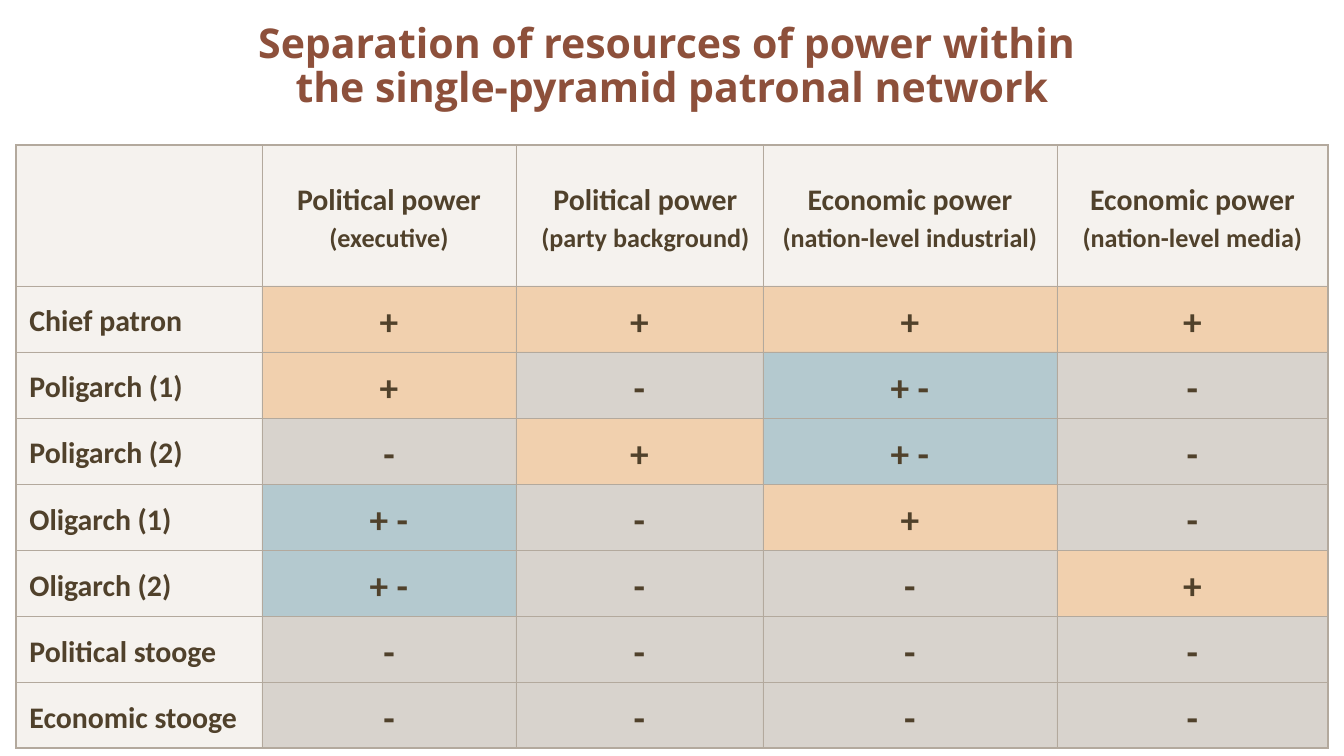
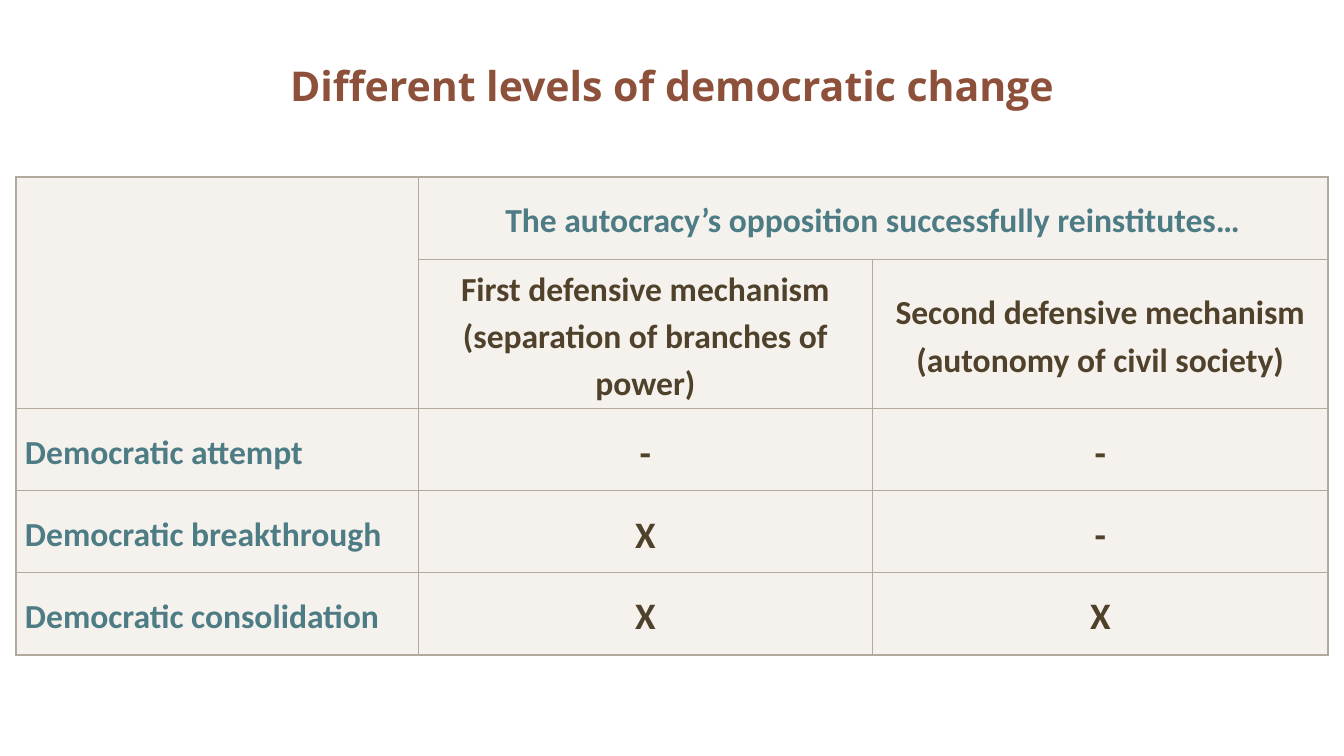
"""Build two slides of tables on power resources and democratic change."""
from lxml import etree
from pptx import Presentation
from pptx import util as u
from pptx.dml.color import RGBColor
from pptx.enum import text
from pptx.oxml import ns

SCALE = 914400 / 134.4
COLORS = {
    "title": "8D503B", "ink": "50412B", "teal": "4D7C85", "border": "B3A99D",
    "linen": "EFEAE4", "orange": "E9B178", "stone": "B3A99D", "blue": "6B95A1",
}
OPACITY = {"linen": 60, "orange": 60, "stone": 50, "blue": 50}
MARK_FILLS = {"+": "orange", "-": "stone", "+ -": "blue"}
MARGIN_SIDES = ("margin_left", "margin_top", "margin_right", "margin_bottom")
LEFT, WIDTH = 16, 1312

RESOURCES = [
    ("Political power ", "(executive)"),
    ("Political power ", "(party background)"),
    ("Economic power ", "(nation-level industrial)"),
    ("Economic power ", "(nation-level media)"),
]
ACTORS = [
    ("Chief patron", "+", "+", "+", "+"),
    ("Poligarch (1)", "+", "-", "+ -", "-"),
    ("Poligarch (2)", "-", "+", "+ -", "-"),
    ("Oligarch (1)", "+ -", "-", "+", "-"),
    ("Oligarch (2)", "+ -", "-", "-", "+"),
    ("Political stooge", "-", "-", "-", "-"),
    ("Economic stooge", "-", "-", "-", "-"),
]
MECHANISMS = [
    "First defensive mechanism (separation of branches of power)",
    "Second defensive mechanism (autonomy of civil society)",
]
LEVELS = [
    ("Democratic attempt", "-", "-"),
    ("Democratic breakthrough", "X", "-"),
    ("Democratic consolidation", "X", "X"),
]


def px(length):
    return u.Emu(round(length * SCALE))


def set_values(target, values):
    for name, value in values.items():
        setattr(target, name, value)


def style_font(font, name, size, color):
    set_values(font, {"name": name, "size": u.Pt(size), "bold": True})
    font.color.rgb = RGBColor.from_string(COLORS[color])


def add_title_slide(prs, heading, height):
    slide = prs.slides.add_slide(prs.slide_layouts[5])
    title = slide.shapes.title
    set_values(title, {"left": px(LEFT), "top": px(0),
                       "width": px(WIDTH), "height": px(height)})
    frame = title.text_frame
    frame.text = heading
    set_values(frame, {"word_wrap": True, "auto_size": text.MSO_AUTO_SIZE.NONE,
                       "vertical_anchor": text.MSO_ANCHOR.MIDDLE})
    line = frame.paragraphs[0]
    set_values(line, {"alignment": text.PP_ALIGN.CENTER, "line_spacing": 0.9})
    for run in line.runs:
        style_font(run.font, "Open Sans", 22, "title")
    return slide


def add_grid(slide, top, columns, rows):
    frame = slide.shapes.add_table(len(rows), len(columns), px(LEFT), px(top),
                                   px(sum(columns)), px(sum(rows)))
    grid = frame.table
    set_values(grid, {"first_row": False, "horz_banding": False})
    for column, width in zip(grid.columns, columns):
        column.width = px(width)
    for row, height in zip(grid.rows, rows):
        row.height = px(height)
    return grid


def fill_cell(cell, color):
    cell.fill.solid()
    cell.fill.fore_color.rgb = RGBColor.from_string(COLORS[color])
    srgb = cell._tc.tcPr.find(".//" + ns.qn("a:srgbClr"))
    etree.SubElement(srgb, ns.qn("a:alpha"), val=str(OPACITY[color] * 1000))


def write_cell(cell, parts, color="ink", centered=True, indent=0):
    """Write (wording, size) parts into the cell as one paragraph."""
    cell.vertical_anchor = text.MSO_ANCHOR.MIDDLE
    line = cell.text_frame.paragraphs[0]
    align = text.PP_ALIGN.CENTER if centered else text.PP_ALIGN.LEFT
    set_values(line, {"alignment": align, "line_spacing": 1.15})
    if indent:
        line._p.get_or_add_pPr().set("marL", str(px(indent)))
    for wording, size in parts:
        run = line.add_run()
        run.text = wording
        style_font(run.font, "Calibri", size, color)


def set_margins(cell, sides):
    set_values(cell, {name: px(side) for name, side in zip(MARGIN_SIDES, sides)})


def draw_borders(grid):
    """Give the outer edge a 1 pt line and the inner edges 0.5 pt."""
    last_row, last_column = len(grid.rows) - 1, len(grid.columns) - 1
    for r in range(last_row + 1):
        for c in range(last_column + 1):
            cell = grid.cell(r, c)
            right = c + (cell.span_width if cell.is_merge_origin else 1) - 1
            outer = {"L": c == 0, "R": right == last_column,
                     "T": r == 0, "B": r == last_row}
            properties = cell._tc.get_or_add_tcPr()
            for place, (side, edge) in enumerate(outer.items()):
                width = u.Pt(1 if edge else 0.5)
                border = etree.Element(ns.qn("a:ln" + side), w=str(width))
                solid = etree.SubElement(border, ns.qn("a:solidFill"))
                etree.SubElement(solid, ns.qn("a:srgbClr"), val=COLORS["border"])
                properties.insert(place, border)


def build_resources(prs):
    slide = add_title_slide(
        prs, "Separation of resources of power within \vthe single-pyramid patronal network", 134)
    grid = add_grid(slide, 145, [246, 254, 247, 294, 271], [141] + [65] * len(ACTORS))
    fill_cell(grid.cell(0, 0), "linen")
    for c, (power, scope) in enumerate(RESOURCES, 1):
        header = grid.cell(0, c)
        fill_cell(header, "linen")
        write_cell(header, [(power, 16), (scope, 14)], indent=12 if c == 2 else 0)
    for r, (actor, *marks) in enumerate(ACTORS, 1):
        label = grid.cell(r, 0)
        fill_cell(label, "linen")
        write_cell(label, [(actor, 16)], centered=False)
        for c, mark in enumerate(marks, 1):
            fill_cell(grid.cell(r, c), MARK_FILLS[mark])
            write_cell(grid.cell(r, c), [(mark, 20)])
    for r in range(len(ACTORS) + 1):
        set_margins(grid.cell(r, 2), (0, 0, 0, 0))
    draw_borders(grid)


def build_levels(prs):
    slide = add_title_slide(prs, "Different levels of democratic change", 177)
    grid = add_grid(slide, 177, [402, 455, 455], [82, 150] + [82] * len(LEVELS))
    for cell in grid.iter_cells():
        fill_cell(cell, "linen")
        set_margins(cell, (9, 0, 9, 0))
    grid.cell(0, 0).merge(grid.cell(1, 0))
    grid.cell(0, 1).merge(grid.cell(0, 2))
    write_cell(grid.cell(0, 1),
               [("The autocracy’s opposition successfully reinstitutes…", 18)], "teal")
    for c, mechanism in enumerate(MECHANISMS, 1):
        write_cell(grid.cell(1, c), [(mechanism, 18)])
    for r, (level, *marks) in enumerate(LEVELS, 2):
        write_cell(grid.cell(r, 0), [(level, 18)], "teal", centered=False)
        for c, mark in enumerate(marks, 1):
            write_cell(grid.cell(r, c), [(mark, 20)])
    draw_borders(grid)


def main():
    prs = Presentation()
    set_values(prs, {"slide_width": px(1344), "slide_height": px(756)})
    build_resources(prs)
    build_levels(prs)
    prs.save("out.pptx")


if __name__ == "__main__":
    main()
